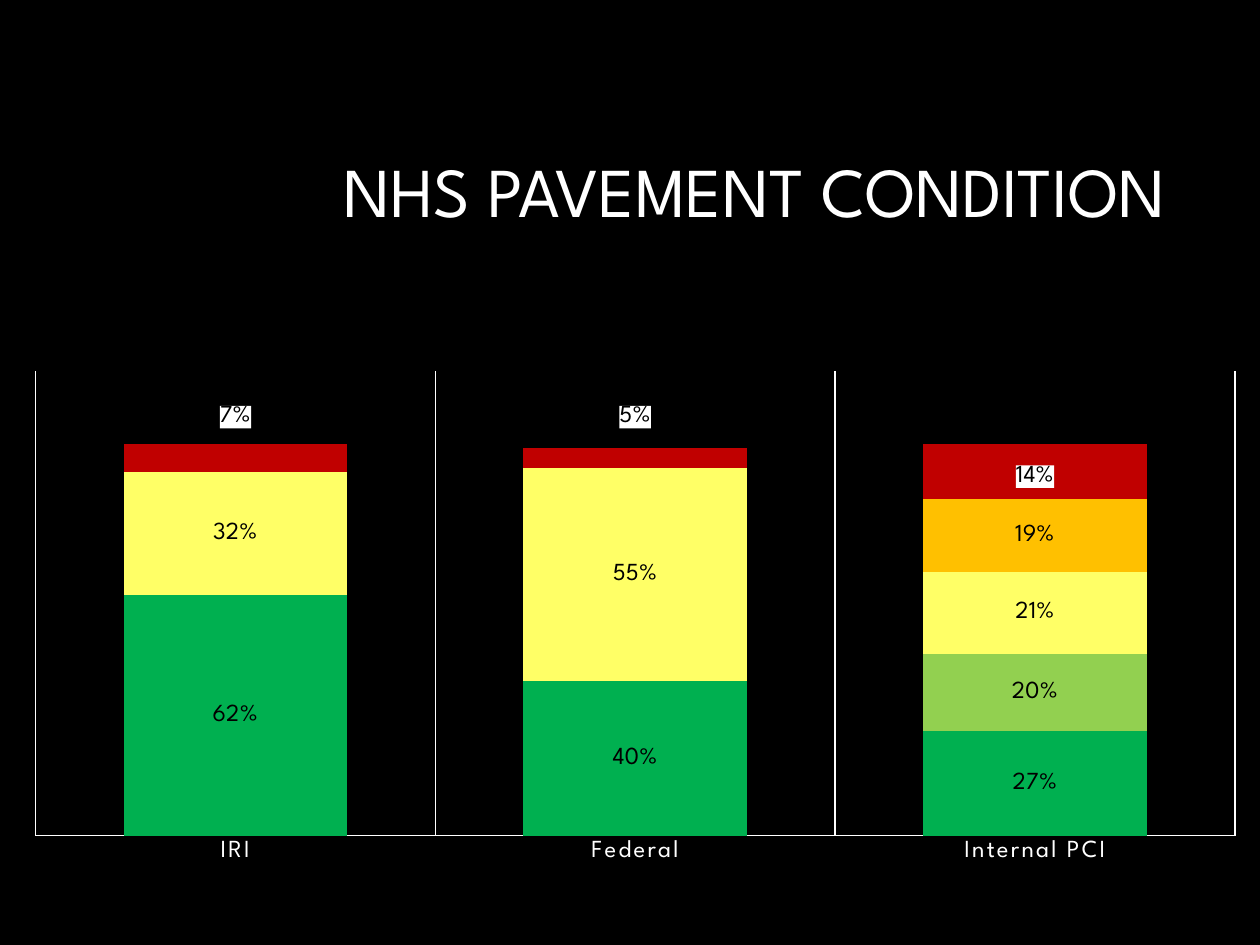
from lxml import etree
from pptx import Presentation
from pptx import util as u
from pptx.chart.data import CategoryChartData
from pptx.dml.color import RGBColor
from pptx.enum import chart as charts, text
from pptx.oxml import parse_xml
from pptx.oxml.ns import nsdecls, qn

FONT = "League Spartan"
COLORS = {
    "background": "000000", "text": "FFFFFF", "label": "000000",
    "good": "00B050", "satisfactory": "92D050", "fair": "FFFF66",
    "poor": "FFC000", "failed": "C00000",
}
TITLE = "NHS PAVEMENT CONDITION"
CATEGORIES = ["IRI", "Federal", "Internal PCI"]
SERIES = [
    ("Series 1", "good", (0.62, 0.4, 0.27)),
    ("Series 2", "satisfactory", (None, None, 0.2)),
    ("Series 3", "fair", (0.32, 0.55, 0.21)),
    ("Series 4", "poor", (None, None, 0.19)),
    ("Series 5", "failed", (0.07, 0.05, 0.14)),
]
# Shift of each top label from its bar centre, as a share of the chart
TOP_LABEL_SHIFTS = [(0, -0.08), (0, -0.08), (0, 0.01)]
PLOT_AREA = {"x": 0.02, "y": 0.02, "w": 0.96, "h": 0.91}


def rgb(name):
    return RGBColor.from_string(COLORS[name])


def style_font(font, size, color):
    font.name = FONT
    font.size = u.Pt(size)
    font.color.rgb = rgb(color)
    font.bold = False


def style_line(line, color, width):
    line.color.rgb = rgb(color)
    line.width = u.Pt(width)


def add_text(slide, words, left, top, width, height, *, size, color, align):
    box = slide.shapes.add_textbox(u.Cm(left), u.Cm(top), u.Cm(width), u.Cm(height))
    frame = box.text_frame
    frame.word_wrap = True
    frame.vertical_anchor = text.MSO_ANCHOR.MIDDLE
    paragraph = frame.paragraphs[0]
    paragraph.alignment = align
    paragraph.line_spacing = 0.9
    run = paragraph.add_run()
    run.text = words
    style_font(run.font, size, color)


def manual_layout(**values):
    layout = parse_xml(f"<c:layout {nsdecls('c')}><c:manualLayout/></c:layout>")
    for name, value in values.items():
        etree.SubElement(layout[0], qn(f"c:{name}")).set("val", str(value))
    return layout


def format_labels(labels):
    labels.show_value = True
    labels.number_format = "0%"
    labels.number_format_is_linked = False
    labels.position = charts.XL_LABEL_POSITION.CENTER
    style_font(labels.font, 14, "label")
    for leader_lines in labels._element.findall(qn("c:showLeaderLines")):
        leader_lines.set("val", "0")


def fill_label_box(element):
    """Put a white box behind a label, or behind all labels of a series."""
    for old_properties in element.findall(qn("c:spPr")):
        element.remove(old_properties)
    element.find(qn("c:txPr")).addprevious(parse_xml(
        f'<c:spPr {nsdecls("c", "a")}><a:solidFill>'
        f'<a:srgbClr val="{COLORS["text"]}"/></a:solidFill>'
        f'<a:ln><a:noFill/></a:ln></c:spPr>'))


def place_top_labels(series):
    """Give the labels of the top series a white box and their own place."""
    for index in range(len(TOP_LABEL_SHIFTS)):
        label = series.points[index].data_label
        style_font(label.font, 14, "label")
        label.position = charts.XL_LABEL_POSITION.CENTER
    group = series.data_labels._element
    fill_label_box(group)
    for element, (x, y) in zip(group.findall(qn("c:dLbl")), TOP_LABEL_SHIFTS):
        fill_label_box(element)
        element.insert(1, manual_layout(x=x, y=y))
        element.insert(2, parse_xml(
            f'<c:numFmt {nsdecls("c")} formatCode="0%" sourceLinked="0"/>'))


def add_condition_chart(slide, left, top, width, height):
    data = CategoryChartData(number_format="0%")
    data.categories = CATEGORIES
    for name, _, values in SERIES:
        data.add_series(name, values)
    chart = slide.shapes.add_chart(
        charts.XL_CHART_TYPE.COLUMN_STACKED,
        u.Cm(left), u.Cm(top), u.Cm(width), u.Cm(height), data).chart
    chart.has_legend = False
    chart.has_title = False
    style_font(chart.font, 10, "text")

    plot_area = chart._chartSpace.chart.plotArea
    for old_layout in plot_area.findall(qn("c:layout")):
        plot_area.remove(old_layout)
    plot_area.insert(0, manual_layout(
        layoutTarget="inner", xMode="edge", yMode="edge", **PLOT_AREA))

    values_axis = chart.value_axis
    values_axis.visible = False
    values_axis.has_major_gridlines = False
    values_axis.minimum_scale, values_axis.maximum_scale = 0, 1.2

    category_axis = chart.category_axis
    category_axis.major_tick_mark = charts.XL_TICK_MARK.NONE
    category_axis.has_major_gridlines = True
    for line in (category_axis.format.line, category_axis.major_gridlines.format.line):
        style_line(line, "text", 0.75)
    style_font(category_axis.tick_labels.font, 14, "text")
    next(category_axis._element.iter(qn("a:defRPr"))).set("spc", "120")

    plot = chart.plots[0]
    plot.gap_width, plot.overlap = 79, 100
    plot.vary_by_categories = False
    for series, (_, color, _) in zip(plot.series, SERIES):
        series.format.fill.solid()
        series.format.fill.fore_color.rgb = rgb(color)
        format_labels(series.data_labels)
    place_top_labels(plot.series[len(SERIES) - 1])


def main():
    presentation = Presentation()
    presentation.slide_width, presentation.slide_height = u.Cm(25.4), u.Cm(19.05)
    slide = presentation.slides.add_slide(presentation.slide_layouts[6])
    slide.background.fill.solid()
    slide.background.fill.fore_color.rgb = rgb("background")
    add_text(slide, TITLE, 6.05, 2.13, 17.7, 3.58,
             size=40, color="text", align=text.PP_ALIGN.RIGHT)
    add_condition_chart(slide, 0.21, 7.27, 25.19, 10.3)
    presentation.save("out.pptx")


if __name__ == "__main__":
    main()
